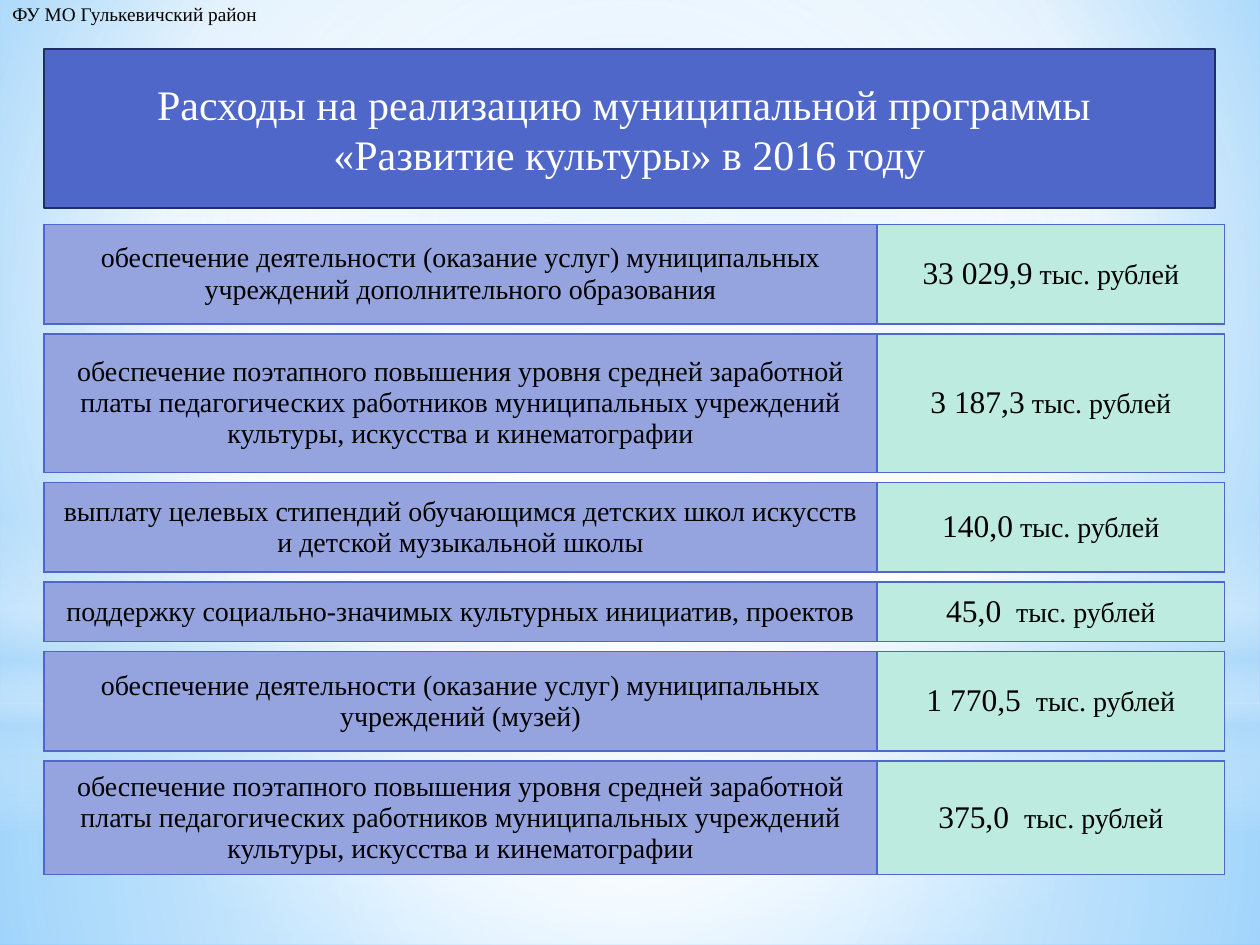
from dataclasses import dataclass

from lxml import etree
from pptx import Presentation
from pptx.dml.color import RGBColor
from pptx.enum.shapes import MSO_SHAPE as SHAPE
from pptx.enum.text import MSO_ANCHOR as ANCHOR, PP_ALIGN as ALIGN
from pptx.oxml import parse_xml
from pptx.oxml.ns import nsdecls, qn
from pptx.util import Inches, Pt


@dataclass(frozen=True)
class Theme:
    font: str = "Times New Roman"
    text: str = "000000"
    title_text: str = "FFFFFF"
    accent: str = "4E67C8"
    title_line: str = "1F2E69"
    label_fill: str = "95A4DE"
    amount_fill: str = "BEEBDF"
    white: str = "FFFFFF"
    sky: str = "B4DCFA"
    bg_edge: str = "5BB9FF"
    bg_core: str = "9ED5FF"
    title_size: int = 24
    amount_size: int = 18
    body_size: int = 16
    note_size: int = 11


T = Theme()

SALARIES = ("обеспечение поэтапного повышения уровня средней заработной платы "
            "педагогических работников муниципальных учреждений культуры, "
            "искусства и кинематографии")
SERVICES = "обеспечение деятельности (оказание услуг) муниципальных учреждений"
UNIT = " тыс. рублей"

# Label, amount, row height in inches
EXPENSES = [
    (f"{SERVICES} дополнительного образования", "33 029,9", 0.79),
    (SALARIES, "3 187,3", 1.1),
    ("выплату целевых стипендий обучающимся детских школ искусств "
     "и детской музыкальной школы", "140,0", 0.71),
    ("поддержку социально-значимых культурных инициатив, проектов", "45,0 ", 0.47),
    (f"{SERVICES} (музей)", "1 770,5 ", 0.79),
    (SALARIES, "375,0 ", 0.9),
]


def style_run(r, size, color=T.text):
    r.font.name = T.font
    r.font.size = Pt(size)
    r.font.bold = False
    r.font.color.rgb = RGBColor.from_string(color)


def set_gradient(fill, parent, stops, focus=None):
    """Gradient of (position, colour, opacity) stops: round if focus is given, else vertical."""
    fill.gradient()
    grad = parent.find(qn("a:gradFill"))
    gs = "".join(
        f'<a:gs pos="{pos * 1000}"><a:srgbClr val="{color}">'
        f'<a:alpha val="{alpha * 1000}"/></a:srgbClr></a:gs>'
        for pos, color, alpha in stops)
    if focus:
        rect = " ".join(f'{side}="{v * 1000}"' for side, v in zip("ltrb", focus))
        shade = f'<a:path path="circle"><a:fillToRect {rect}/></a:path>'
    else:
        shade = '<a:lin ang="5400000" scaled="0"/>'
    parent.replace(grad, parse_xml(
        f'<a:gradFill {nsdecls("a")} rotWithShape="1"><a:gsLst>{gs}</a:gsLst>{shade}</a:gradFill>'))


def add_backdrop(slide):
    """Sky gradient on the slide, soft light shapes on its layout."""
    fill = slide.background.fill
    set_gradient(fill, slide.element.find(".//" + qn("p:bgPr")),
                 [(0, T.bg_core, 100), (60, T.white, 100), (100, T.bg_edge, 100)],
                 (20, 10, 20, 60))
    centre = (50, 50, 50, 50)
    lights = [
        (SHAPE.RECTANGLE, 5.58, 1.92, centre,
         [(0, T.white, 91), (37, T.white, 76), (100, T.sky, 79)]),
        (SHAPE.RECTANGLE, 0, 5.58, centre,
         [(0, T.white, 89), (48, T.white, 62), (100, T.sky, 79)]),
        (SHAPE.RECTANGLE, 4.12, 2.5, None,
         [(0, T.white, 0), (29, T.white, 30), (45, T.sky, 40),
          (55, T.white, 26), (65, T.sky, 60), (100, T.white, 0)]),
        (SHAPE.OVAL, 1.75, 5.58, centre, [(0, T.white, 100), (56, T.white, 0)]),
    ]
    for kind, top, height, focus, stops in lights:
        sp = slide.shapes.add_shape(kind, 0, Inches(top), Inches(10), Inches(height))
        sp.shadow.inherit = False
        sp.line.fill.background()
        set_gradient(sp.fill, sp.element.spPr, stops, focus)
        slide.slide_layout.shapes.element.append(sp.element)


def add_note(slide, left, top, width, height):
    tf = slide.shapes.add_textbox(left, top, width, height).text_frame
    tf.word_wrap = False
    tf.text = "ФУ МО Гулькевичский район"
    style_run(tf.paragraphs[0].runs[0], T.note_size)


def add_title(slide, left, top, width, height):
    sp = slide.shapes.title
    sp.left, sp.top, sp.width, sp.height = left, top, width, height
    sp.element.spPr.find(qn("a:xfrm")).addnext(parse_xml(
        f'<a:prstGeom {nsdecls("a")} prst="roundRect"><a:avLst/></a:prstGeom>'))
    sp.fill.solid()
    sp.fill.fore_color.rgb = RGBColor.from_string(T.accent)
    sp.line.color.rgb = RGBColor.from_string(T.title_line)
    sp.line.width = Pt(1.25)
    tf = sp.text_frame
    tf.text = ("Расходы на реализацию муниципальной программы \n"
               "«Развитие культуры» в 2016 году")
    tf.vertical_anchor = ANCHOR.MIDDLE
    for p in tf.paragraphs:
        p.alignment = ALIGN.CENTER
        style_run(p.runs[0], T.title_size, T.title_text)


def set_borders(cell):
    tc_pr = cell._tc.get_or_add_tcPr()
    for side in "LRTB":
        ln = etree.SubElement(tc_pr, qn(f"a:ln{side}"), w=str(Pt(1)))
        solid = etree.SubElement(ln, qn("a:solidFill"))
        etree.SubElement(solid, qn("a:srgbClr"), val=T.accent)


def fill_cell(cell, color, parts):
    """Centred cell made of (text, size) parts."""
    set_borders(cell)
    cell.fill.solid()
    cell.fill.fore_color.rgb = RGBColor.from_string(color)
    cell.vertical_anchor = ANCHOR.MIDDLE
    p = cell.text_frame.paragraphs[0]
    p.alignment = ALIGN.CENTER
    for text, size in parts:
        r = p.add_run()
        r.text = text
        style_run(r, size)


def add_expense(slide, left, top, width, height, label, amount):
    table = slide.shapes.add_table(1, 2, left, top, width, height).table
    table.first_row = table.horz_banding = False
    table.columns[0].width = Inches(6.61)
    table.columns[1].width = width - Inches(6.61)
    fill_cell(table.cell(0, 0), T.label_fill, [(label, T.body_size)])
    fill_cell(table.cell(0, 1), T.amount_fill,
              [(amount, T.amount_size), (UNIT, T.body_size)])


def add_expenses(slide, left, top, width, gap):
    """Stack of one-row tables with equal gaps."""
    for label, amount, row in EXPENSES:
        height = Inches(row)
        add_expense(slide, left, top, width, height, label, amount)
        top += height + gap


def main():
    prs = Presentation()
    prs.slide_width, prs.slide_height = Inches(10), Inches(7.5)
    slide = prs.slides.add_slide(prs.slide_layouts[5])
    add_backdrop(slide)
    add_note(slide, 0, Inches(-0.03), Inches(2.18), Inches(0.29))
    add_title(slide, Inches(0.35), Inches(0.39), Inches(9.29), Inches(1.26))
    add_expenses(slide, Inches(0.35), Inches(1.78), Inches(9.37), Inches(0.08))
    prs.save("out.pptx")


if __name__ == "__main__":
    main()
